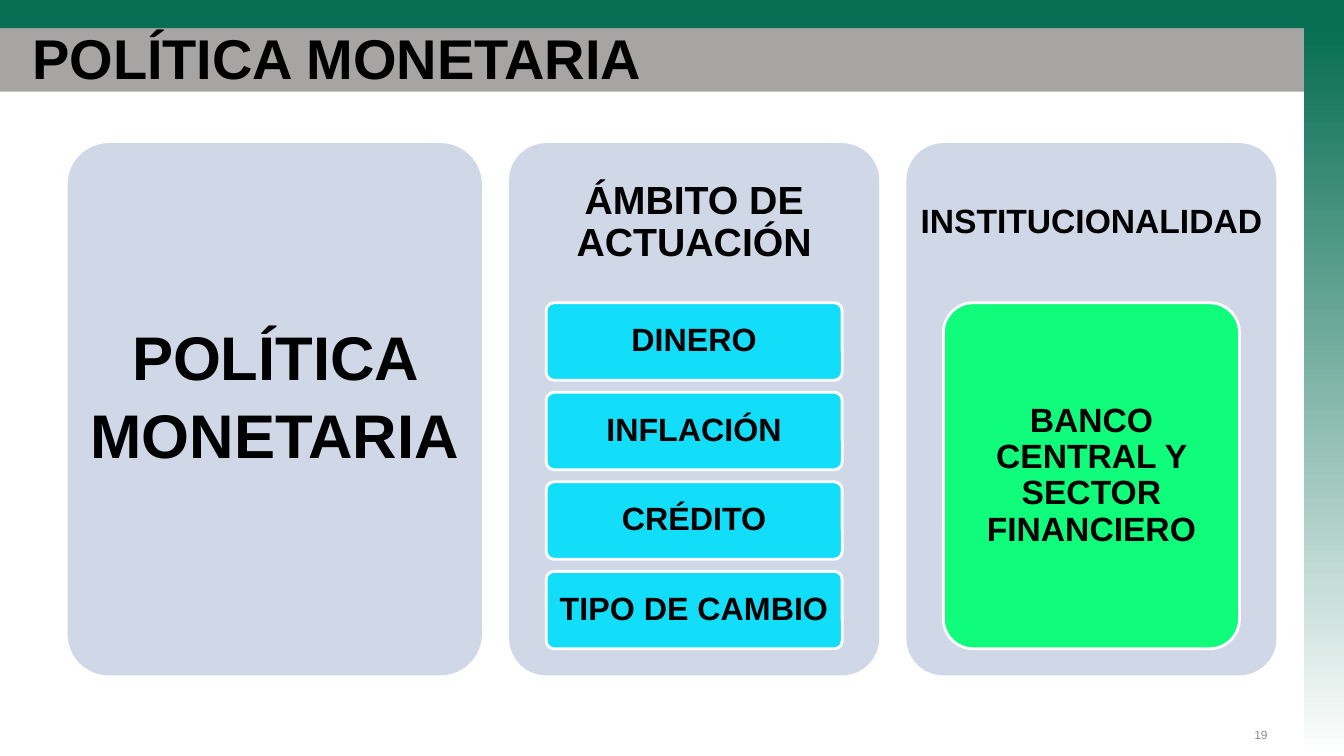
from dataclasses import dataclass

from pptx import Presentation
from pptx.dml.color import RGBColor
from pptx.enum import shapes, text
from pptx.util import Inches, Pt


@dataclass(frozen=True)
class Theme:
    font: str = "Arial"
    green: str = "086E54"
    gray: str = "A6A5A4"
    panel: str = "D0D8E8"
    cyan: str = "12DEFA"
    lime: str = "0FFD7B"
    white: str = "FFFFFF"
    black: str = "000000"
    muted: str = "8C8C8C"
    title_size: float = 40
    lead_size: float = 44
    heading_size: float = 28
    body_size: float = 24
    item_size: float = 23
    number_size: float = 8.5


THEME = Theme()
PANEL_GAP = 0.27
ITEM_GAP = 0.12
HEADING_SHARE = 0.3
CONTENT_SHARE = 0.65
SIDE_SHARE = 0.1


def color(value):
    return RGBColor.from_string(value)


def write(shape, words, size, fill=THEME.black, bold=True,
          align=text.PP_ALIGN.CENTER, spacing=0.9, inset=(0.06, 0.05)):
    """Fill a shape with one vertically centred paragraph."""
    frame = shape.text_frame
    across, down = (Inches(value) for value in inset)
    frame_format = {
        "word_wrap": True, "auto_size": text.MSO_AUTO_SIZE.NONE,
        "vertical_anchor": text.MSO_ANCHOR.MIDDLE,
        "margin_left": across, "margin_right": across,
        "margin_top": down, "margin_bottom": down,
    }
    for name, value in frame_format.items():
        setattr(frame, name, value)
    paragraph = frame.paragraphs[0]
    paragraph.text = words
    paragraph.alignment = align
    paragraph.line_spacing = spacing
    font_format = {"name": THEME.font, "size": Pt(size), "bold": bold}
    for name, value in font_format.items():
        setattr(paragraph.runs[0].font, name, value)
    paragraph.runs[0].font.color.rgb = color(fill)


def add_text(slide, box, words, size, **options):
    write(slide.shapes.add_textbox(*map(Inches, box)), words, size, **options)


def add_block(slide, box, fill, rounded=False, outline=None):
    kind = shapes.MSO_SHAPE.ROUNDED_RECTANGLE if rounded else shapes.MSO_SHAPE.RECTANGLE
    shape = slide.shapes.add_shape(kind, *map(Inches, box))
    shape.shadow.inherit = False
    if rounded:
        shape.adjustments[0] = 0.1
    shape.fill.solid()
    shape.fill.fore_color.rgb = color(fill)
    if outline:
        shape.line.color.rgb = color(outline)
        shape.line.width = Pt(2)
    else:
        shape.line.fill.background()
    return shape


def add_frame(slide, box):
    """Draw the title band, the top band, the fading side band and the number."""
    left, top, width, height = box
    band, side = 0.28, 0.4
    add_block(slide, (left, top + band, width, 0.63), THEME.gray)
    add_block(slide, (left, top, width, band), THEME.green)
    edge = add_block(slide, (left + width - side, top + band, side, height - band),
                     THEME.green)
    edge.fill.gradient()
    edge.fill.gradient_angle = 270
    for stop, value, position in zip(edge.fill.gradient_stops,
                                     (THEME.green, THEME.white), (0, 1)):
        stop.color.rgb = color(value)
        stop.position = position
    add_text(slide, (11.89, 7.09, 0.78, 0.4), "19", THEME.number_size,
             fill=THEME.muted, bold=False, align=text.PP_ALIGN.RIGHT,
             spacing=1, inset=(0.1, 0.05))


def place_title(slide, box, words):
    title = slide.shapes.title
    for name, value in zip(("left", "top", "width", "height"), box):
        setattr(title, name, Inches(value))
    write(title, words, THEME.title_size, align=text.PP_ALIGN.LEFT,
          spacing=1, inset=(0.1, 0.05))
    # Bring the title in front of the bands
    title._element.getparent().append(title._element)


def add_lead_panel(slide, box, words):
    left, top, width, height = box
    add_block(slide, box, THEME.panel, rounded=True)
    add_text(slide, (left, top, width, height - 0.32), words, THEME.lead_size,
             spacing=1.05, inset=(0.18, 0.18))


def add_topic_panel(slide, box, heading, heading_size, items, item_size, fill):
    """Draw a panel with a heading over equal stacked items."""
    left, top, width, height = box
    add_block(slide, box, THEME.panel, rounded=True)
    add_text(slide, (left, top, width, height * HEADING_SHARE), heading,
             heading_size, inset=(0.1, 0.1))
    item_height = (height * CONTENT_SHARE - ITEM_GAP * (len(items) - 1)) / len(items)
    for index, words in enumerate(items):
        item_top = top + height * HEADING_SHARE + index * (item_height + ITEM_GAP)
        item = add_block(slide, (left + width * SIDE_SHARE, item_top,
                                 width * (1 - 2 * SIDE_SHARE), item_height),
                         fill, rounded=True, outline=THEME.white)
        write(item, words, item_size)


def add_panels(slide, box):
    left, top, width, height = box
    lead_width = 4.11
    topic_width = (width - lead_width - 2 * PANEL_GAP) / 2
    add_lead_panel(slide, (left, top, lead_width, height), "POLÍTICA MONETARIA")
    topics = (
        ("ÁMBITO DE ACTUACIÓN", THEME.heading_size,
         ("DINERO", "INFLACIÓN", "CRÉDITO", "TIPO DE CAMBIO"),
         THEME.item_size, THEME.cyan),
        ("INSTITUCIONALIDAD", THEME.body_size,
         ("BANCO CENTRAL Y SECTOR FINANCIERO",), THEME.body_size, THEME.lime),
    )
    for index, topic in enumerate(topics):
        topic_left = left + lead_width + PANEL_GAP + index * (topic_width + PANEL_GAP)
        add_topic_panel(slide, (topic_left, top, topic_width, height), *topic)


def main():
    presentation = Presentation()
    presentation.slide_width = Inches(13.33)
    presentation.slide_height = Inches(7.5)
    slide = presentation.slides.add_slide(presentation.slide_layouts[5])
    add_frame(slide, (0, 0, 13.33, 7.5))
    add_panels(slide, (0.67, 1.42, 11.99, 5.28))
    place_title(slide, (0.22, 0.3, 12.67, 0.53), "POLÍTICA MONETARIA")
    presentation.save("out.pptx")


if __name__ == "__main__":
    main()
